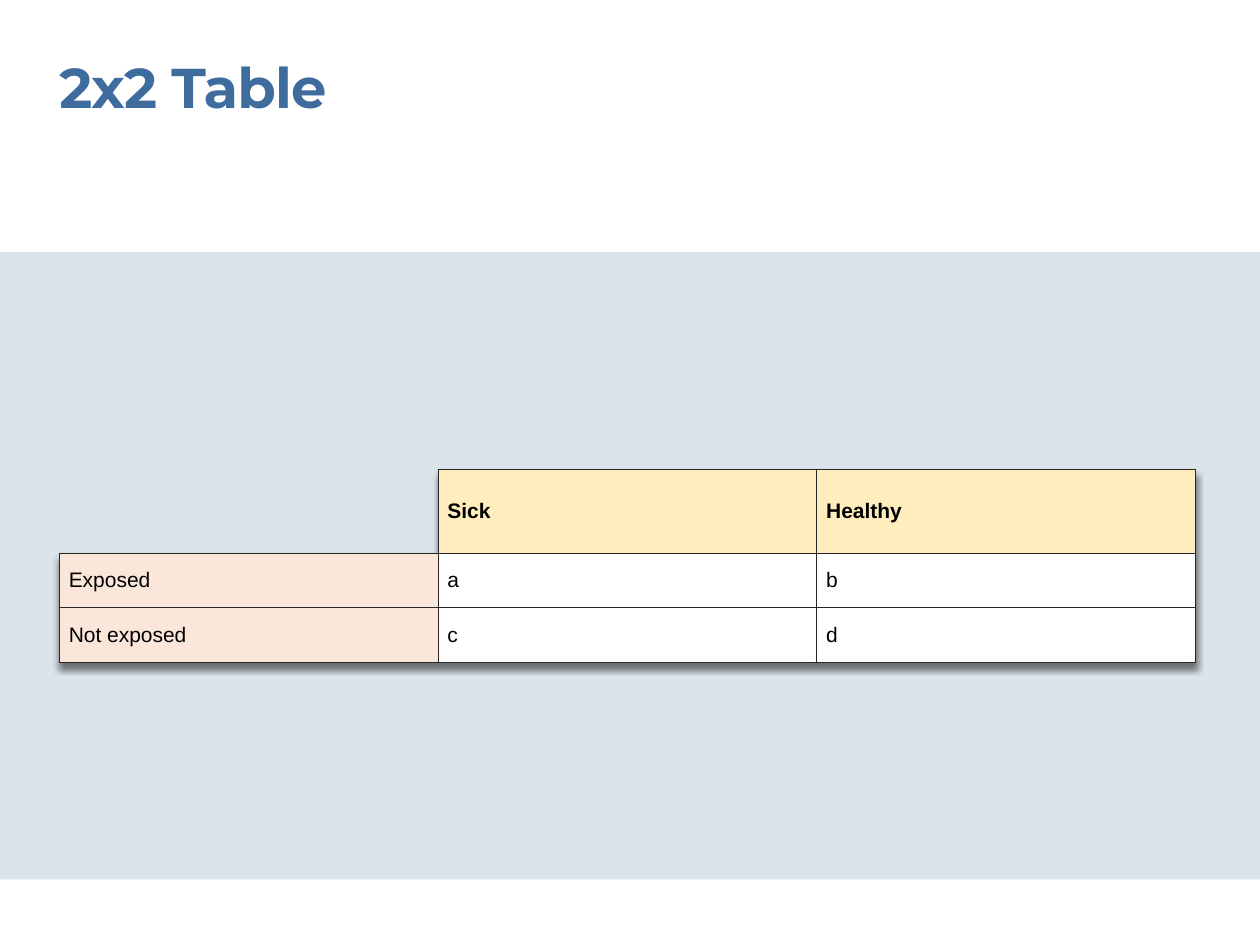
from dataclasses import dataclass

from lxml.etree import SubElement
from pptx import Presentation
from pptx.dml.color import RGBColor as RGB
from pptx.enum.shapes import MSO_SHAPE as SHAPE
from pptx.enum.text import MSO_ANCHOR as ANCHOR, PP_ALIGN as ALIGN
from pptx.oxml import parse_xml
from pptx.oxml.ns import nsdecls, qn
from pptx.util import Pt


@dataclass(frozen=True)
class Theme:
    title: str = "3D6C9D"
    band: str = "DBE4EA"
    header: str = "FFEDBD"
    label: str = "FBE7DA"
    value: str = "FFFFFF"
    text: str = "000000"
    border: str = "262626"
    title_font: str = "Montserrat"
    body_font: str = "Arial"
    title_size: float = 32
    body_size: float = 12
    border_width: float = 0.5


THEME = Theme()
NO_TABLE_STYLE = "{2D5ABB26-0587-4C30-8999-92F81FD0307C}"
ROWS = [
    ["", "Sick", "Healthy"],
    ["Exposed", "a", "b"],
    ["Not exposed", "c", "d"],
]
ROW_HEIGHTS = [48, 31.2, 31.2]


def format_run(r, font, size, color, bold):
    r.font.name = font
    r.font.size = Pt(size)
    r.font.bold = bold
    r.font.color.rgb = RGB.from_string(color)


def add_title(slide, text, x, y, w, h):
    sp = slide.shapes.title
    sp.left, sp.top, sp.width, sp.height = Pt(x), Pt(y), Pt(w), Pt(h)
    tf = sp.text_frame
    tf.text = text
    tf.margin_left = tf.margin_right = tf.margin_top = tf.margin_bottom = 0
    tf.vertical_anchor = ANCHOR.TOP
    p = tf.paragraphs[0]
    p.alignment = ALIGN.LEFT
    r = p.runs[0]
    format_run(r, THEME.title_font, THEME.title_size, THEME.title, True)
    r.font._element.set("spc", "-50")


def add_band(slide, x, y, w, h):
    sp = slide.shapes.add_shape(SHAPE.RECTANGLE, Pt(x), Pt(y), Pt(w), Pt(h))
    sp.shadow.inherit = False
    sp.fill.solid()
    sp.fill.fore_color.rgb = RGB.from_string(THEME.band)
    sp.line.fill.background()


def set_borders(cell, sides):
    """Draw the given sides, listed in the order L, R, T, B."""
    tc_pr = cell._tc.get_or_add_tcPr()
    for side in sides:
        ln = SubElement(tc_pr, qn(f"a:ln{side}"), w=str(Pt(THEME.border_width)))
        fill = SubElement(ln, qn("a:solidFill"))
        SubElement(fill, qn("a:srgbClr"), val=THEME.border)


def add_table_shadow(table):
    table._tbl.tblPr.insert(0, parse_xml(
        f'<a:effectLst {nsdecls("a")}>'
        f'<a:outerShdw blurRad="{Pt(4)}" dist="{Pt(3)}" dir="5400000" rotWithShape="0">'
        '<a:srgbClr val="000000"><a:alpha val="50000"/></a:srgbClr>'
        '</a:outerShdw></a:effectLst>'))


def fill_cell(cell, text, color, bold):
    cell.fill.solid()
    cell.fill.fore_color.rgb = RGB.from_string(color)
    cell.vertical_anchor = ANCHOR.MIDDLE
    cell.margin_left = cell.margin_right = Pt(5.4)
    cell.margin_top = cell.margin_bottom = Pt(3.6)
    cell.text_frame.text = text
    format_run(cell.text_frame.paragraphs[0].runs[0],
               THEME.body_font, THEME.body_size, THEME.text, bold)


def add_exposure_table(slide, x, y, w, h):
    frame = slide.shapes.add_table(len(ROWS), len(ROWS[0]), Pt(x), Pt(y), Pt(w), Pt(h))
    table = frame.table
    table.first_row = table.horz_banding = False
    table._tbl.tblPr.find(qn("a:tableStyleId")).text = NO_TABLE_STYLE
    add_table_shadow(table)
    for row, height in zip(table.rows, ROW_HEIGHTS):
        row.height = Pt(height)
    for i, texts in enumerate(ROWS):
        for j, text in enumerate(texts):
            cell = table.cell(i, j)
            set_borders(cell, "LRTB" if text else "RB")
            if text:
                color = THEME.header if i == 0 else THEME.label if j == 0 else THEME.value
                fill_cell(cell, text, color, bold=i == 0)
            else:
                cell.fill.background()


def main():
    prs = Presentation()
    prs.slide_width, prs.slide_height = Pt(720), Pt(540)
    slide = prs.slides.add_slide(prs.slide_layouts[5])
    add_band(slide, 0, 144, 720, 358.5)
    add_title(slide, "2x2 Table", 33.9, 30.2, 422, 39)
    add_exposure_table(slide, 33.9, 268.1, 649.2, sum(ROW_HEIGHTS))
    prs.save("out.pptx")


if __name__ == "__main__":
    main()
